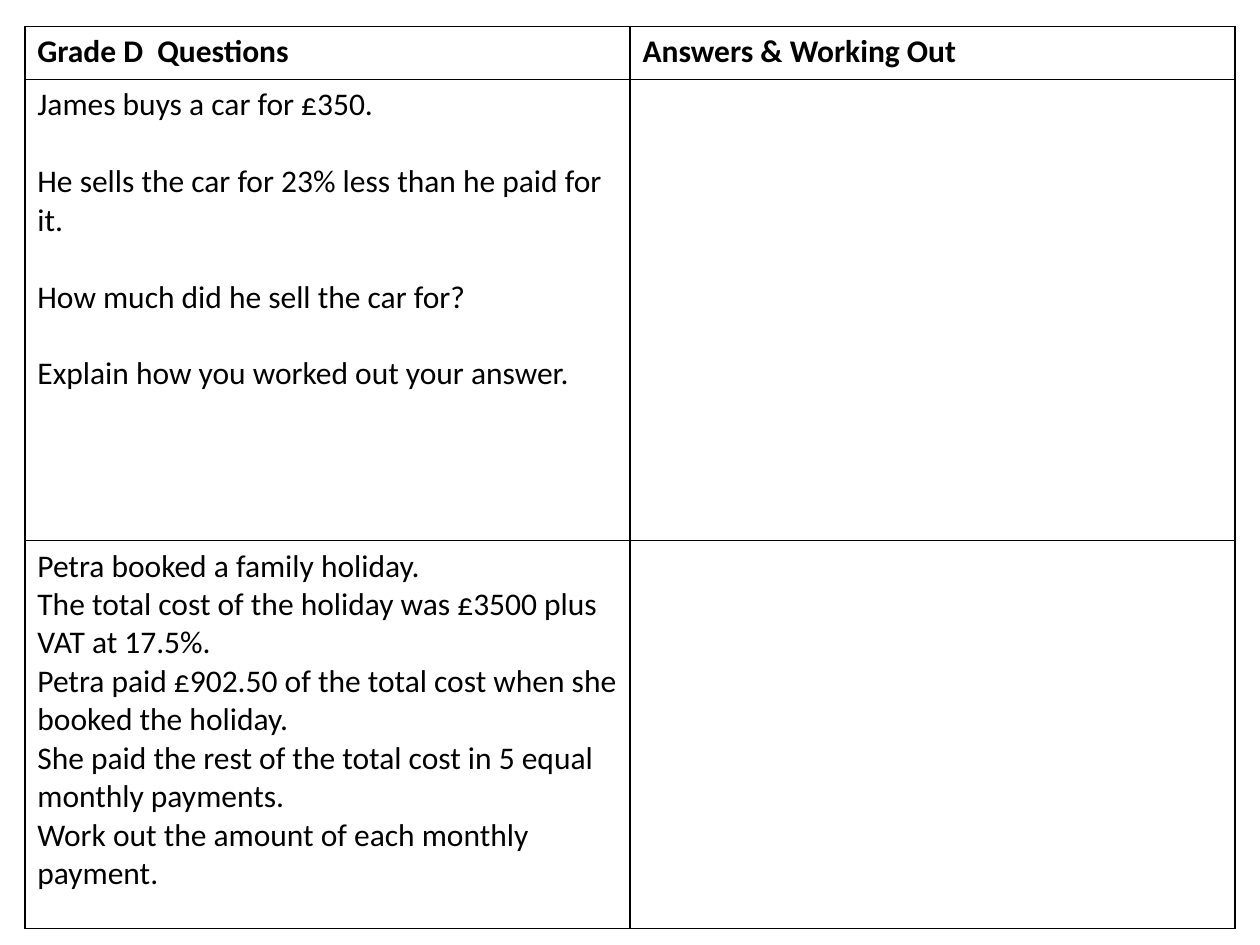
from lxml import etree
from pptx import Presentation
from pptx.dml.color import RGBColor
from pptx.oxml import ns
from pptx.util import Cm, Pt

INK = "000000"
PAPER = "FFFFFF"
COLS = [12.2, 12.2]
ROWS = [1.07, 9.3, 7.82]
HEADS = ["Grade D  Questions", "Answers & Working Out"]
CAR = [
    "James buys a car for £350.",
    "He sells the car for 23% less than he paid for it.",
    "How much did he sell the car for?",
    "Explain how you worked out your answer.",
]
TRIP = [
    "Petra booked a family holiday.",
    "The total cost of the holiday was £3500 plus VAT at 17.5%.",
    "Petra paid £902.50 of the total cost when she booked the holiday.",
    "She paid the rest of the total cost in 5 equal monthly payments.",
    "Work out the amount of each monthly payment.",
]


def paint(color, value):
    color.rgb = RGBColor.from_string(value)


def write(frame, lines, size=18, bold=False, color=INK, font="Calibri", gap=0):
    """Put one paragraph per line, with gap points between them."""
    for i, line in enumerate(lines):
        para = frame.paragraphs[0] if i == 0 else frame.add_paragraph()
        para.space_before = Pt(gap if i else 0)
        run = para.add_run()
        run.text = line
        run.font.name = font
        run.font.size = Pt(size)
        run.font.bold = bold
        paint(run.font.color, color)


def frame_cell(cell, width=1, color=INK):
    """Fill the cell and rule all four sides; borders must precede the fill."""
    cell.fill.solid()
    paint(cell.fill.fore_color, PAPER)
    props = cell._tc.get_or_add_tcPr()
    for i, side in enumerate(("lnL", "lnR", "lnT", "lnB")):
        line = etree.Element(ns.qn(f"a:{side}"), w=str(Pt(width)))
        fill = etree.SubElement(line, ns.qn("a:solidFill"))
        etree.SubElement(fill, ns.qn("a:srgbClr"), val=color)
        props.insert(i, line)


def add_grid(slide, left, top):
    shape = slide.shapes.add_table(
        len(ROWS), len(COLS), Cm(left), Cm(top), Cm(sum(COLS)), Cm(sum(ROWS)))
    grid = shape.table
    grid.first_row = grid.horz_banding = False
    for col, width in zip(grid.columns, COLS):
        col.width = Cm(width)
    for row, height in zip(grid.rows, ROWS):
        row.height = Cm(height)
    for cell in grid.iter_cells():
        frame_cell(cell)
    return grid


def main():
    deck = Presentation()
    deck.slide_width, deck.slide_height = Cm(25.4), Cm(19.05)
    slide = deck.slides.add_slide(deck.slide_layouts[6])
    grid = add_grid(slide, 0.5, 0.53)
    for i, head in enumerate(HEADS):
        write(grid.cell(0, i).text_frame, [head], bold=True)
    write(grid.cell(1, 0).text_frame, CAR, gap=22)
    write(grid.cell(2, 0).text_frame, TRIP)
    deck.save("out.pptx")


if __name__ == "__main__":
    main()
